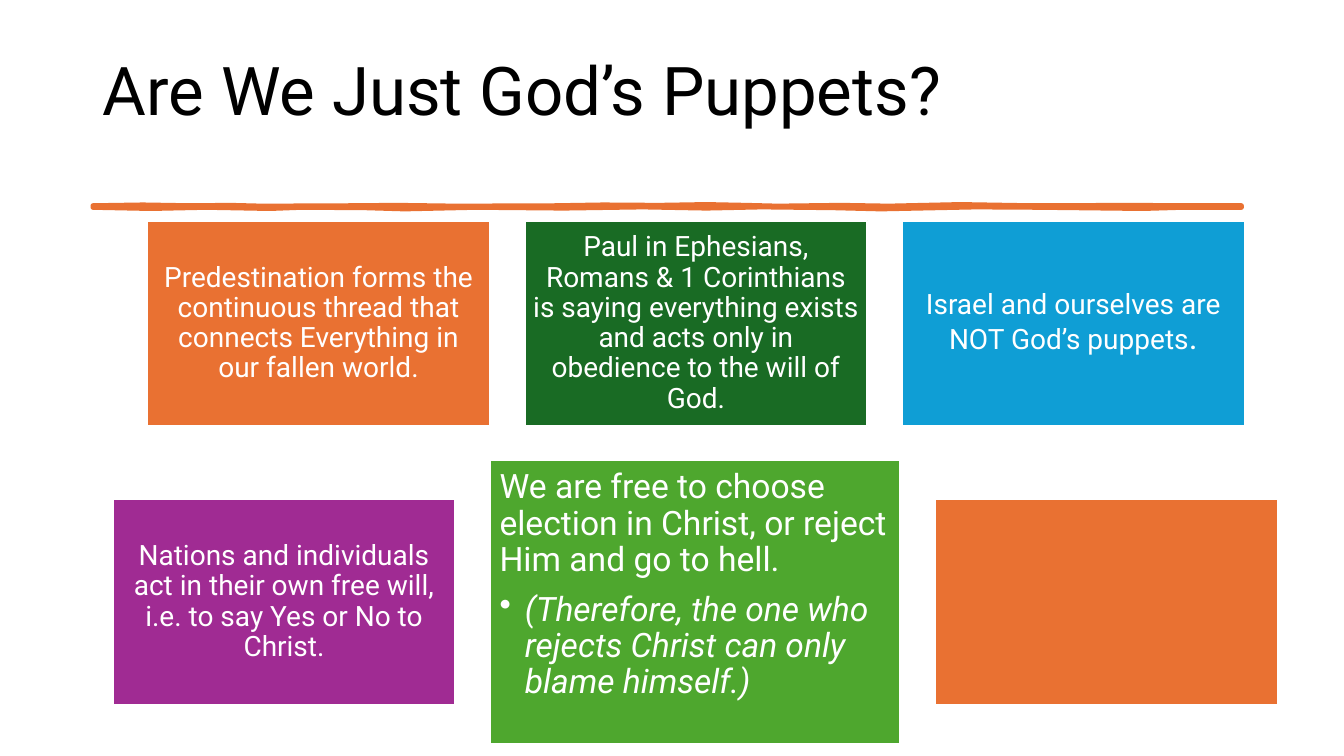
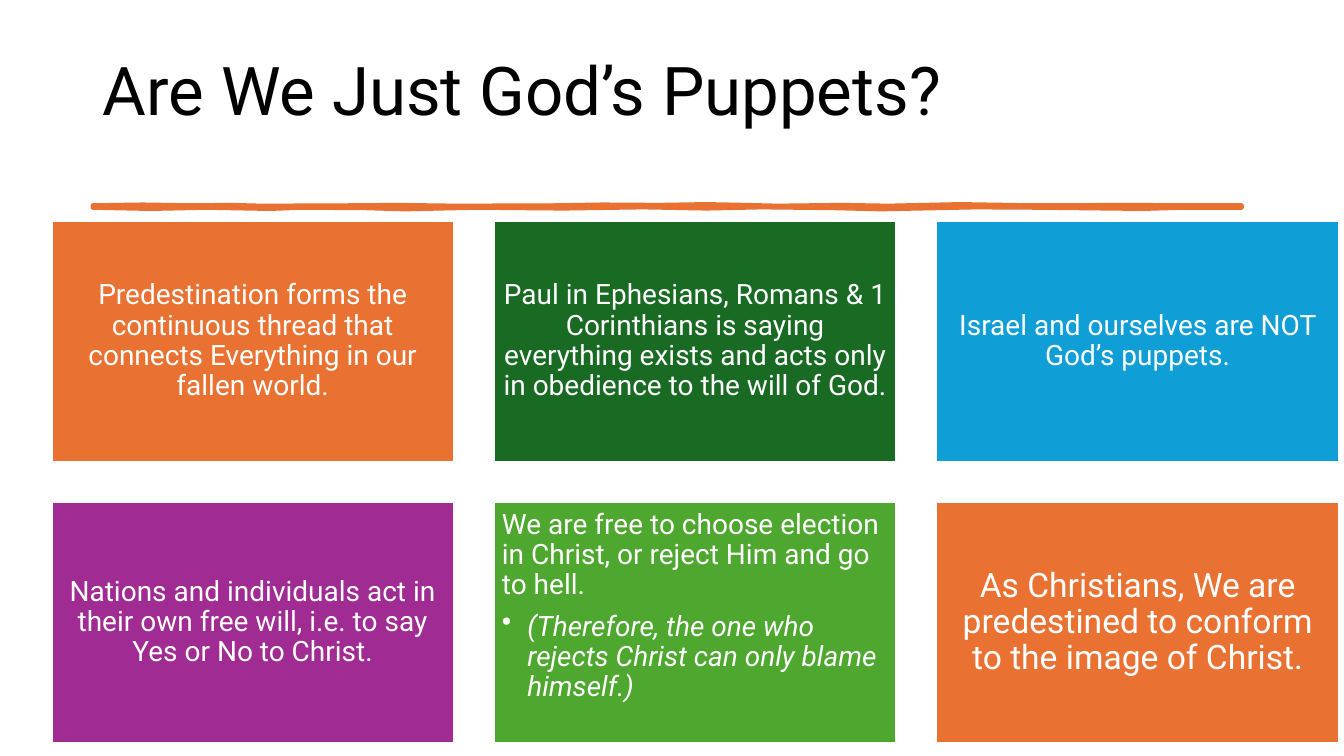
"""Build two slides of coloured cards about predestination and free will."""
from lxml import etree
from pptx import Presentation
from pptx.dml.color import RGBColor
from pptx.enum import shapes, text
from pptx.oxml import ns
from pptx.util import Cm, Pt

FONT = "Roboto"
ORANGE, WHITE, BLACK = "E97132", "FFFFFF", "000000"
TITLE = "Are We Just God’s Puppets?"
CARD_COLOURS = [ORANGE, "196B24", "0F9ED5", "A02B93", "4EA72E", ORANGE]
CLAIMS = [
    ["Predestination forms the continuous thread that connects Everything in our fallen world."],
    ["Paul in Ephesians, Romans & 1 Corinthians is saying everything exists and acts only "
     "in obedience to the will of God."],
    ["Israel and ourselves are NOT God’s puppets."],
    ["Nations and individuals act in their own free will, i.e. to say Yes or No to Christ."],
    ["We are free to choose election in Christ, or reject Him and go to hell.",
     "(Therefore, the one who rejects Christ can only blame himself.)"],
]
CONCLUSION = ["As Christians, We are predestined to conform to the image of Christ."]

RULE_TOP = [(2.34, 5.18), (3.6, 5.16), (4.8, 5.18), (5.8, 5.17), (6.6, 5.19), (8.8, 5.18),
            (10, 5.17), (11.5, 5.19), (14, 5.18), (15.2, 5.16), (16.6, 5.17), (17.8, 5.15),
            (18.8, 5.17), (19.6, 5.19), (21.2, 5.17), (22.4, 5.19), (24.2, 5.15),
            (26, 5.18), (28.6, 5.17), (29.8, 5.18), (31.29, 5.18)]
RULE_BOTTOM = [(31.29, 5.23), (29.8, 5.23), (28.8, 5.26), (26.2, 5.23), (24.6, 5.22),
               (22.2, 5.27), (21, 5.24), (19.2, 5.22), (17.8, 5.25), (16.2, 5.22),
               (14.2, 5.25), (12, 5.23), (10.2, 5.27), (9.2, 5.24), (7.6, 5.23),
               (6.8, 5.26), (5.2, 5.23), (3.8, 5.26), (2.34, 5.23)]

SMALL, TALL, WIDE = (8.64, 5.18, 20), (10.34, 7.14, 24), (10.14, 6.08, 20)
SLIDES = [
    {"gap": 0.87, "claims": CLAIMS + [[]],
     "rows": [(3.71, 8.15, [SMALL] * 3), (2.84, 15.17, [SMALL, TALL, SMALL])]},
    {"gap": 1.01, "claims": CLAIMS + [CONCLUSION],
     "rows": [(1.3, 8.6, [WIDE] * 3), (1.3, 15.69, [WIDE, WIDE, (10.14, 6.08, 24)])]},
]


def colour(hex_string):
    return RGBColor.from_string(hex_string)


def paint(shape, fill, line, width):
    shape.shadow.inherit = False
    shape.fill.solid()
    shape.fill.fore_color.rgb = colour(fill)
    shape.line.color.rgb = colour(line)
    shape.line.width = Pt(width)


deck = Presentation()
deck.slide_width, deck.slide_height = Cm(33.87), Cm(19.05)

for plan in SLIDES:
    slide = deck.slides.add_slide(deck.slide_layouts[5])

    heading = slide.shapes.title
    heading.left, heading.top = Cm(2.34), Cm(0.53)
    heading.width, heading.height = Cm(29.21), Cm(3.68)
    frame = heading.text_frame
    frame.text = TITLE
    frame.auto_size = text.MSO_AUTO_SIZE.NONE
    frame.vertical_anchor = text.MSO_ANCHOR.MIDDLE
    line = frame.paragraphs[0]
    line.alignment = text.PP_ALIGN.LEFT
    line.line_spacing = 0.9
    font = line.runs[0].font
    font.name, font.size, font.color.rgb = FONT, Pt(48), colour(BLACK)

    outline = [(Cm(x), Cm(y)) for x, y in RULE_TOP + RULE_BOTTOM]
    builder = slide.shapes.build_freeform(*outline[0])
    builder.add_line_segments(outline[1:], close=True)
    rule = builder.convert_to_shape()
    paint(rule, ORANGE, ORANGE, 3.25)
    etree.SubElement(rule.line._get_or_add_ln(), ns.qn("a:round"))

    contents = iter(zip(CARD_COLOURS, plan["claims"]))
    for left, middle, sizes in plan["rows"]:
        for width, height, size in sizes:
            fill, claim = next(contents)
            card = slide.shapes.add_shape(
                shapes.MSO_SHAPE.RECTANGLE,
                Cm(left), Cm(middle - height / 2), Cm(width), Cm(height))
            left += width + plan["gap"]
            paint(card, fill, WHITE, 1.5)
            if not claim:
                continue
            has_aside = len(claim) > 1
            frame = card.text_frame
            frame.word_wrap = True
            inset = Cm(size / 100)
            frame.margin_left = frame.margin_right = inset
            frame.margin_top = frame.margin_bottom = inset
            frame.vertical_anchor = text.MSO_ANCHOR.TOP if has_aside else text.MSO_ANCHOR.MIDDLE
            frame.text = "\n".join(claim)
            for paragraph in frame.paragraphs:
                paragraph.alignment = text.PP_ALIGN.LEFT if has_aside else text.PP_ALIGN.CENTER
                paragraph.line_spacing = 0.9
                font = paragraph.runs[0].font
                font.name, font.size, font.color.rgb = FONT, Pt(size), colour(WHITE)
            if has_aside:
                statement, aside = frame.paragraphs
                statement.space_after = Pt(size * 0.4)
                aside.level = 1
                aside.runs[0].font.italic = True
                properties = aside._p.get_or_add_pPr()
                properties.set("marL", str(Cm(0.64)))
                properties.set("indent", str(-Cm(0.64)))
                etree.SubElement(properties, ns.qn("a:buChar"), char="•")

puppets = deck.slides[0].shapes[4].text_frame.paragraphs[0]
puppets.runs[0].text = CLAIMS[2][0].rstrip(".")
full_stop = puppets.add_run()
full_stop.text = "."
font = full_stop.font
font.name, font.size, font.color.rgb = FONT, Pt(24), colour(WHITE)

deck.save("out.pptx")
